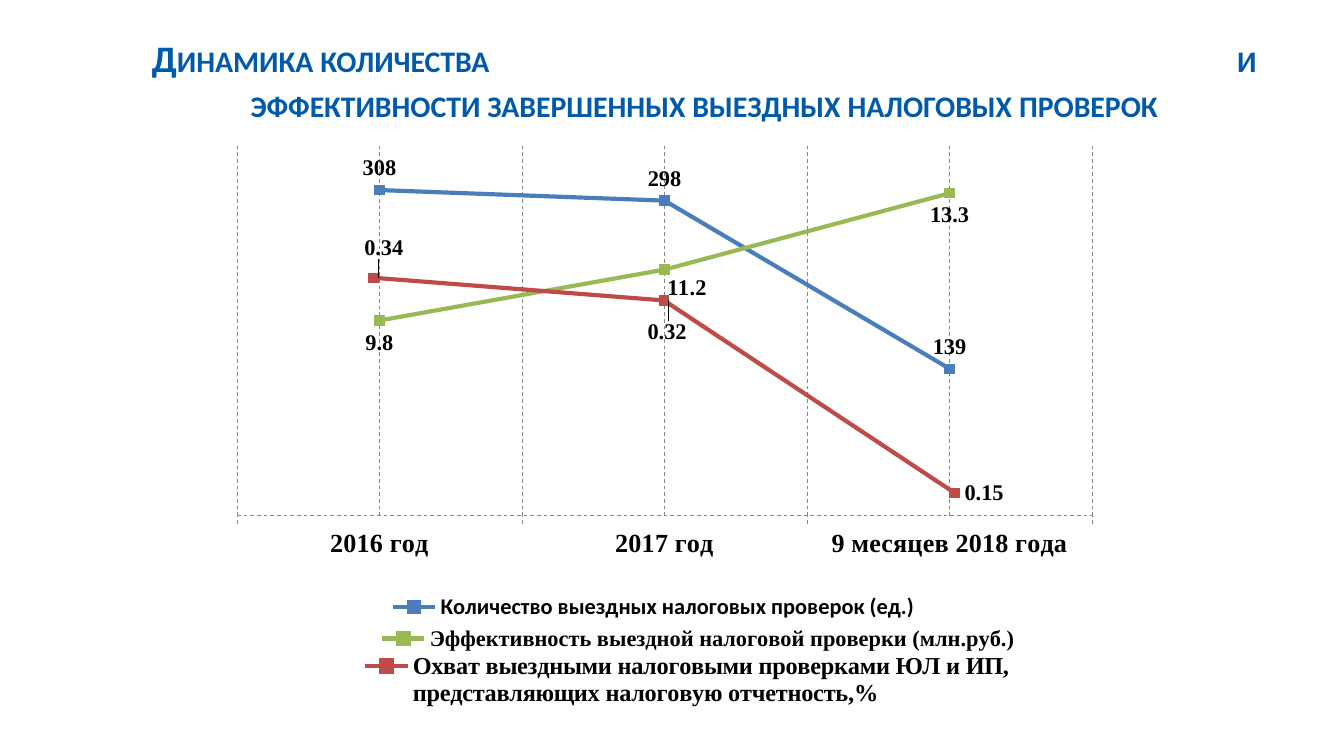
from dataclasses import dataclass
from typing import Optional

from lxml import etree
from pptx import Presentation
from pptx import util as u
from pptx.chart.data import CategoryChartData
from pptx.dml.color import RGBColor
from pptx.enum import chart as ce
from pptx.enum import dml, text
from pptx.oxml import ns

TITLE_BLUE = RGBColor(0x00, 0x5A, 0xA9)
BLACK = RGBColor(0x00, 0x00, 0x00)
GRID_GRAY = RGBColor(0x86, 0x86, 0x86)
BLUE = RGBColor(0x4A, 0x7E, 0xBB)
GREEN = RGBColor(0x98, 0xB9, 0x54)
RED = RGBColor(0xBE, 0x4B, 0x48)
SANS, SERIF = "Calibri", "Times New Roman"
POSITION = ce.XL_LABEL_POSITION
YEARS = ("2016 год", "2017 год", "9 месяцев 2018 года")
NO_LEADER_LINES = (
    '<c:extLst xmlns:c="http://schemas.openxmlformats.org/drawingml/2006/chart">'
    '<c:ext uri="{CE6537A1-D6FC-4f65-9D91-7224C49458BB}"'
    ' xmlns:c15="http://schemas.microsoft.com/office/drawing/2012/chart">'
    '<c15:showLeaderLines val="0"/></c:ext></c:extLst>')


@dataclass
class Trend:
    name: str
    values: tuple[float, ...]
    maximum: float
    color: RGBColor
    box: tuple[float, ...]          # inches
    plot: tuple[float, ...]         # percent of the chart
    legend: tuple[float, ...]       # percent of the chart
    legend_size: int
    legend_font: str
    label_position: POSITION
    label_shifts: dict[int, tuple[float, float]]    # percent of the chart
    kind: ce.XL_CHART_TYPE = ce.XL_CHART_TYPE.LINE_MARKERS_STACKED
    categories: Optional[tuple[str, ...]] = None


TRENDS = [
    Trend("Количество выездных налоговых проверок (ед.)", (308, 298, 139), 350, BLUE,
          (1.61, 1, 6.67, 3.7), (2.3, 2.3, 95.4, 74.4), (18.8, 92, 60, 6),
          12, SANS, POSITION.ABOVE, {}, ce.XL_CHART_TYPE.LINE_MARKERS, YEARS),
    Trend("Эффективность выездной налоговой проверки (млн.руб.)", (9.8, 11.2, 13.3), 14,
          GREEN, (1.61, 0.61, 6.67, 4.44), (2.3, 14.4, 95.4, 85.3),
          (17.3, 90.8, 73, 5), 12, SERIF, POSITION.BELOW, {1: (2.5, -0.6)}),
    Trend("Охват выездными налоговыми проверками ЮЛ и ИП, представляющих налоговую "
          "отчетность,%", (0.34, 0.32, 0.15), 0.4, RED, (1.67, 0.59, 6.8, 4.74),
          (0.4, 20.5, 95.4, 71.1), (13.6, 89.9, 74, 9), 13, SERIF,
          POSITION.RIGHT, {0: (-2.1, -4.7), 1: (-2.9, 5)}),
]


def make_layout(**values) -> etree._Element:
    layout = etree.Element(ns.qn("c:layout"))
    manual = etree.SubElement(layout, ns.qn("c:manualLayout"))
    for tag, value in values.items():
        etree.SubElement(manual, ns.qn(f"c:{tag}")).set("val", str(value))
    return layout


def framed_layout(frame: tuple[float, ...], **target) -> etree._Element:
    x, y, width, height = (percent / 100 for percent in frame)
    return make_layout(**target, xMode="edge", yMode="edge",
                       x=x, y=y, w=width, h=height)


def remove_layout(parent) -> None:
    for layout in parent.findall(ns.qn("c:layout")):
        parent.remove(layout)


def no_fill() -> etree._Element:
    properties = etree.Element(ns.qn("c:spPr"))
    etree.SubElement(properties, ns.qn("a:noFill"))
    line = etree.SubElement(properties, ns.qn("a:ln"))
    etree.SubElement(line, ns.qn("a:noFill"))
    return properties


def set_font(font, name: str, size: float, color: RGBColor = BLACK) -> None:
    font.name, font.size, font.bold = name, u.Pt(size), True
    font.color.rgb = color


def dash_line(line) -> None:
    line.color.rgb = GRID_GRAY
    line.width = u.Pt(0.5)
    line.dash_style = dml.MSO_LINE.DASH


def format_axes(chart, trend: Trend) -> None:
    values = chart.value_axis
    values.minimum_scale, values.maximum_scale = 0, trend.maximum
    values.has_major_gridlines = False
    values.visible = False
    axis = chart.category_axis
    if trend.categories is None:
        axis.visible = False
        return
    axis.has_major_gridlines = axis.has_minor_gridlines = True
    axis.major_tick_mark = ce.XL_TICK_MARK.OUTSIDE
    dash_line(axis.major_gridlines.format.line)
    major = axis._element.find(ns.qn("c:majorGridlines"))
    minor = axis._element.find(ns.qn("c:minorGridlines"))
    for child in major:
        minor.append(etree.fromstring(etree.tostring(child)))
    dash_line(axis.format.line)
    set_font(axis.tick_labels.font, SERIF, 14)


def format_series(series, trend: Trend) -> None:
    series.smooth = False
    series.format.line.color.rgb = trend.color
    series.format.line.width = u.Pt(2.25)
    marker = series.marker
    marker.style, marker.size = ce.XL_MARKER_STYLE.SQUARE, 5
    marker.format.fill.solid()
    marker.format.fill.fore_color.rgb = trend.color
    marker.format.line.color.rgb = trend.color

    labels = series.data_labels
    labels.show_value = True
    labels.position = trend.label_position
    set_font(labels.font, SERIF, 12)
    for index in trend.label_shifts:
        label = series.points[index].data_label
        set_font(label.font, SERIF, 12)
        label.position = trend.label_position
    elements = labels._element.findall(ns.qn("c:dLbl"))
    for element, (x, y) in zip(elements, trend.label_shifts.values()):
        element.insert(1, make_layout(x=x / 100, y=y / 100))
    labels._element.append(etree.fromstring(NO_LEADER_LINES))


def add_trend(slide, trend: Trend) -> None:
    data = CategoryChartData()
    data.categories = trend.categories or ("1", "2", "3")
    data.add_series(trend.name, trend.values)
    box = [u.Inches(length) for length in trend.box]
    chart = slide.shapes.add_chart(trend.kind, *box, data).chart
    chart.has_title = False
    chart.font.name, chart.font.size = SANS, u.Pt(18)
    chart.plots[0].vary_by_categories = False
    format_axes(chart, trend)
    format_series(chart.plots[0].series[0], trend)

    # Legend
    chart.has_legend = True
    chart.legend.position = ce.XL_LEGEND_POSITION.BOTTOM
    chart.legend.include_in_layout = False
    set_font(chart.legend.font, trend.legend_font, trend.legend_size)
    legend = chart.legend._element
    remove_layout(legend)
    legend.find(ns.qn("c:legendPos")).addnext(framed_layout(trend.legend))

    # Plot frame and clear background, so that the charts overlay
    root = chart._chartSpace
    plot_area = root.chart.plotArea
    remove_layout(plot_area)
    plot_area.insert(0, framed_layout(trend.plot, layoutTarget="inner"))
    plot_area.append(no_fill())
    root.chart.addnext(no_fill())


def add_title(slide) -> None:
    title = slide.shapes.title
    title.left, title.top = u.Inches(0.75), u.Inches(0.37)
    title.width, title.height = u.Inches(8.98), u.Inches(0.45)
    frame = title.text_frame
    frame.text = ("\tДинамика количества\tи\n"
                  "эффективности завершенных выездных налоговых проверок")
    frame.word_wrap = True
    frame.auto_size = text.MSO_AUTO_SIZE.NONE
    frame.vertical_anchor = text.MSO_ANCHOR.MIDDLE
    first, second = frame.paragraphs
    first.alignment, second.alignment = text.PP_ALIGN.LEFT, text.PP_ALIGN.CENTER
    tabs = etree.SubElement(first._p.get_or_add_pPr(), ns.qn("a:tabLst"))
    for inches, side in ((0.28, "l"), (8.5, "r")):
        etree.SubElement(tabs, ns.qn("a:tab"), pos=str(u.Inches(inches)), algn=side)
    for paragraph in frame.paragraphs:
        for run in paragraph.runs:
            set_font(run.font, SANS, 20, TITLE_BLUE)
            run._r.get_or_add_rPr().set("cap", "small")


def main() -> None:
    presentation = Presentation()
    presentation.slide_width = u.Inches(10)
    presentation.slide_height = u.Inches(10 * 9 / 16)
    slide = presentation.slides.add_slide(presentation.slide_layouts[5])
    add_title(slide)
    for trend in TRENDS:
        add_trend(slide, trend)
    # The title lies just below the last chart
    slide.shapes[-1]._element.addprevious(slide.shapes.title._element)
    presentation.save("out.pptx")


if __name__ == "__main__":
    main()
